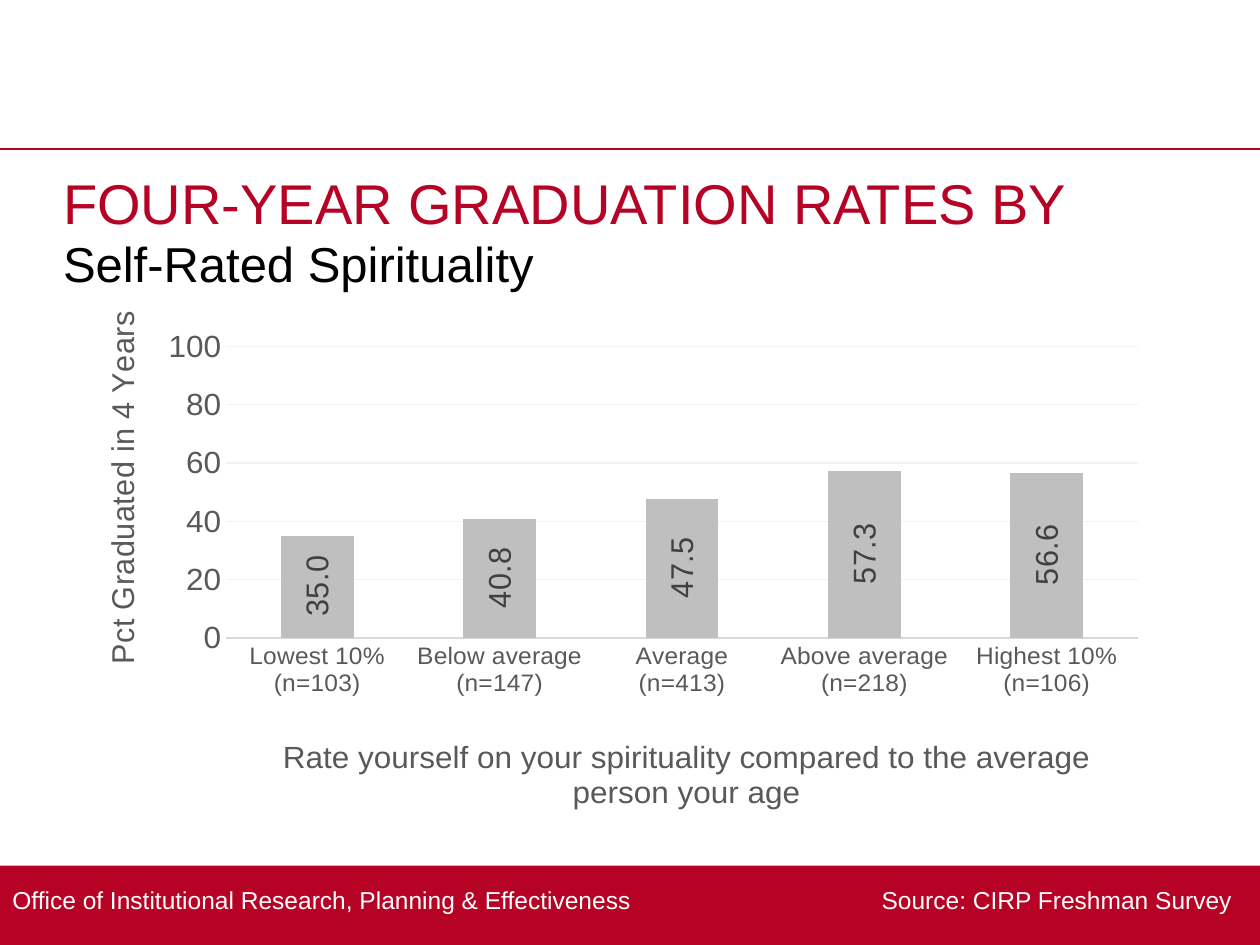
from lxml import etree
from pptx import Presentation, util as u
from pptx.chart.data import CategoryChartData
from pptx.dml.color import RGBColor
from pptx.enum import chart as ch, shapes as sh, text as tx
from pptx.oxml import parse_xml
from pptx.oxml.ns import nsdecls, qn

HUES = {"red": "B60225", "white": "FFFFFF", "black": "000000", "bar": "BFBFBF",
        "label": "404040", "axis": "595959", "line": "D9D9D9", "grid": "F2F2F2"}
RATES = {"Lowest 10%\n(n=103)": 35, "Below average\n(n=147)": 40.8,
         "Average\n(n=413)": 47.5, "Above average\n(n=218)": 57.3,
         "Highest 10%\n(n=106)": 56.6}
W, H = 10, 7.5


def hue(name):
    return RGBColor.from_string(HUES[name])


def inch(box):
    return [u.Inches(n) for n in box]


def style(font, size, name):
    font.name, font.size, font.bold = "Arial", u.Pt(size), False
    font.color.rgb = hue(name)


def stroke(line, name, width=0.75):
    line.color.rgb = hue(name)
    line.width = u.Pt(width)


def lay(node, at, spots, inner=False):
    """Fix the manual layout of a chart part, as shares of the chart."""
    for old in node.findall(qn("c:layout")):
        node.remove(old)
    parts = '<c:layoutTarget val="inner"/>' if inner else ""
    parts += "".join(f'<c:{k}Mode val="edge"/>' for k in "xy")
    parts += "".join(f'<c:{k} val="{v}"/>' for k, v in zip("xywh", spots))
    node.insert(at, parse_xml(f'<c:layout {nsdecls("c")}><c:manualLayout>{parts}'
                              '</c:manualLayout></c:layout>'))


def turn(body):
    body.set("rot", "-5400000")
    body.set("vert", "horz")


def head(slide, box):
    """Title and subtitle, in the template's placeholders."""
    x, y, w, h = box
    title, sub = slide.placeholders
    rows = [(title, (x, y, w, 0.56), 0.05, "FOUR-YEAR GRADUATION RATES BY", 32, "red"),
            (sub, (x, y + 0.56, w, h - 0.56), 0, "Self-Rated Spirituality", 28, "black")]
    for part, spot, pad, words, size, name in rows:
        part.left, part.top, part.width, part.height = inch(spot)
        frame = part.text_frame
        frame.margin_left = frame.margin_right = frame.margin_bottom = 0
        frame.margin_top = u.Inches(pad)
        frame.vertical_anchor = tx.MSO_ANCHOR.TOP
        frame.text = words
        para = frame.paragraphs[0]
        props = para._p.get_or_add_pPr()
        props.set("marL", "0")
        props.set("indent", "0")
        etree.SubElement(props, qn("a:buNone"))
        para.alignment = tx.PP_ALIGN.LEFT
        para.space_before = u.Pt(0)
        style(para.font, size, name)


def name_axis(axis, words, spots, upright=False):
    title = axis.axis_title
    frame = title.text_frame
    frame.text = words
    style(frame.paragraphs[0].font, 18, "axis")
    if upright:
        turn(frame._txBody.bodyPr)
    lay(title._element, 1, spots)


def graph(slide, box):
    """Column chart of the graduation rates."""
    data = CategoryChartData(number_format="#,##0.0")
    data.categories = list(RATES)
    data.add_series("Series 1", list(RATES.values()))
    chart = slide.shapes.add_chart(ch.XL_CHART_TYPE.COLUMN_CLUSTERED,
                                   *inch(box), data).chart
    chart.has_legend = chart.has_title = False
    style(chart.font, 18, "black")
    lay(chart._chartSpace.chart.plotArea, 0, (0.145, 0.064, 0.804, 0.595), True)

    # Columns and their values
    plot = chart.plots[0]
    plot.gap_width, plot.overlap, plot.vary_by_categories = 150, -27, False
    fill = plot.series[0].format.fill
    fill.solid()
    fill.fore_color.rgb = hue("bar")
    plot.has_data_labels = True
    tags = plot.data_labels
    tags.show_value = True
    tags.position = ch.XL_LABEL_POSITION.CENTER
    tags.number_format, tags.number_format_is_linked = "#,##0.0", False
    style(tags.font, 18, "label")
    turn(tags._element.find(qn("c:txPr")).find(qn("a:bodyPr")))

    # Axes
    cats, vals = chart.category_axis, chart.value_axis
    for axis, size in ((cats, 14), (vals, 18)):
        axis.major_tick_mark = axis.minor_tick_mark = ch.XL_TICK_MARK.NONE
        style(axis.tick_labels.font, size, "axis")
    stroke(cats.format.line, "line")
    vals.format.line.fill.background()
    vals.minimum_scale, vals.maximum_scale, vals.major_unit = 0, 100, 20
    vals.tick_labels.number_format = "0"
    vals.tick_labels.number_format_is_linked = False
    stroke(vals.major_gridlines.format.line, "grid")
    name_axis(cats, "Rate yourself on your spirituality compared to the average "
              "person your age", (0.19, 0.85))
    name_axis(vals, "Pct Graduated in 4 Years", (0.03, 0), True)


def foot(slide, box):
    """Red band with the office at left and the source at right."""
    x, y, w, h = box
    band = slide.shapes.add_shape(sh.MSO_SHAPE.RECTANGLE, *inch(box))
    band.shadow.inherit = False
    band.fill.solid()
    band.fill.fore_color.rgb = hue("red")
    band.line.fill.background()
    note = slide.shapes.add_textbox(*inch((x, y, w, h * 0.85)))
    frame = note.text_frame
    frame.word_wrap = True
    frame.vertical_anchor = tx.MSO_ANCHOR.MIDDLE
    para = frame.paragraphs[0]
    tabs = etree.SubElement(para._p.get_or_add_pPr(), qn("a:tabLst"))
    etree.SubElement(tabs, qn("a:tab"), pos=str(u.Inches(w - 0.32)), algn="r")
    para.add_run().text = ("Office of Institutional Research, Planning & Effectiveness"
                           "\tSource: CIRP Freshman Survey")
    style(para.font, 14, "white")


def rule(slide, y):
    line = slide.shapes.add_connector(sh.MSO_CONNECTOR.STRAIGHT, *inch((0, y, W, y)))
    stroke(line.line, "red", 1)
    etree.SubElement(line._element.spPr, qn("a:effectLst"))


def main():
    deck = Presentation()
    deck.slide_width, deck.slide_height = inch((W, H))
    slide = deck.slides.add_slide(deck.slide_layouts[1])
    foot(slide, (0, 6.87, W, H - 6.87))
    rule(slide, 1.18)
    head(slide, (W * 0.05, 1.29, W * 0.9, 1.01))
    graph(slide, (0.49, 2.5, W * 0.9, 4))
    deck.save("out.pptx")


if __name__ == "__main__":
    main()
